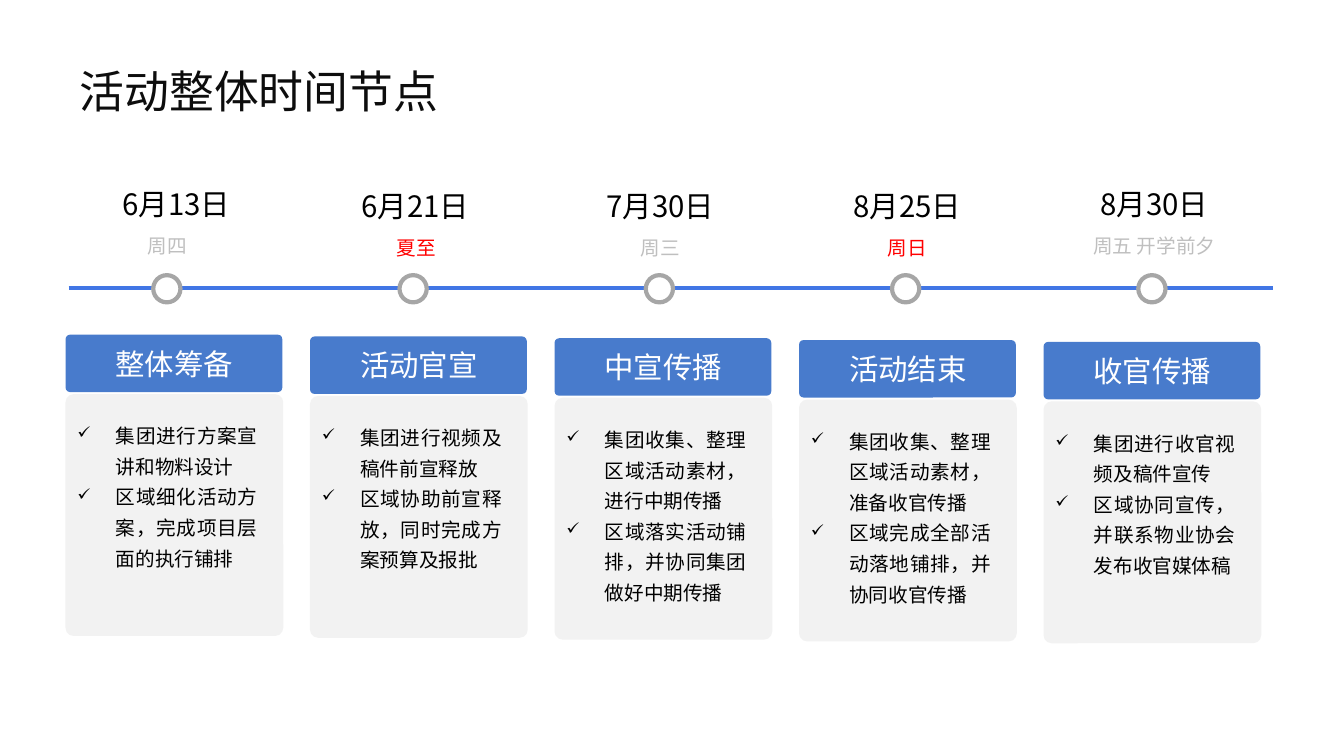
from math import ceil

from lxml import etree
from pptx import Presentation
from pptx.dml.color import RGBColor
from pptx.enum import shapes, text
from pptx.oxml import ns
from pptx.util import Inches, Pt

FONT = "Noto Sans CJK JP"
COLORS = {
    "title": "0D0D0D", "text": "000000", "white": "FFFFFF", "gray": "BFBFBF",
    "red": "FF0000", "axis": "4176E5", "ring": "A6A6A6", "head": "487BCC",
    "panel": "F2F2F2",
}
DATES = [
    ("6月13日", "周四", "gray", 1.75, 1.66, 1.8),
    ("6月21日", "夏至", "red", 4.12, 4.13, 1.82),
    ("7月30日", "周三", "gray", 6.55, 6.55, 1.82),
    ("8月25日", "周日", "red", 9, 9, 1.82),
    ("8月30日", "周五 开学前夕", "gray", 11.45, 11.45, 1.8),
]
STAGES = [
    ("整体筹备", ["集团进行方案宣讲和物料设计", "区域细化活动方案，完成项目层面的执行铺排"]),
    ("活动官宣", ["集团进行视频及稿件前宣释放", "区域协助前宣释放，同时完成方案预算及报批"]),
    ("中宣传播", ["集团收集、整理区域活动素材，进行中期传播", "区域落实活动铺排，并协同集团做好中期传播"]),
    ("活动结束", ["集团收集、整理区域活动素材，准备收官传播", "区域完成全部活动落地铺排，并协同收官传播"]),
    ("收官传播", ["集团进行收官视频及稿件宣传", "区域协同宣传，并联系物业协会发布收官媒体稿"]),
]


def tint(name):
    """Return the named colour."""
    return RGBColor.from_string(COLORS[name])


def add(parent, tag, **attrs):
    """Append a drawing element with attributes."""
    node = etree.SubElement(parent, ns.qn(tag))
    for key, value in attrs.items():
        node.set(key, value)
    return node


def write(frame, *lines, size=14, color="text", align="CENTER", space=None, bullet=None):
    """Fill a text frame with formatted paragraphs."""
    frame.word_wrap = True
    for i, line in enumerate(lines):
        para = frame.add_paragraph() if i else frame.paragraphs[0]
        para.alignment = getattr(text.PP_ALIGN, align)
        if space:
            para.line_spacing = space
        if bullet:
            props = para._p.get_or_add_pPr()
            props.set("marL", str(Inches(0.38)))
            props.set("indent", str(Inches(-0.38)))
            add(props, "a:buSzPct", val="85000")
            add(props, "a:buChar", char=bullet)
        run = para.add_run()
        run.text = line
        run.font.size = Pt(size)
        run.font.name = FONT
        run.font.color.rgb = tint(color)
        add(run._r.get_or_add_rPr(), "a:ea", typeface=FONT)


def label(host, box, *lines, **style):
    """Add a text box that grows with its text."""
    frame = host.add_textbox(*map(Inches, box)).text_frame
    write(frame, *lines, **style)
    frame.auto_size = text.MSO_AUTO_SIZE.SHAPE_TO_FIT_TEXT


def block(host, kind, box, fill, line=None, round=None):
    """Add a flat preset shape."""
    shape = host.add_shape(getattr(shapes.MSO_SHAPE, kind), *map(Inches, box))
    shape.shadow.inherit = False
    shape.fill.solid()
    shape.fill.fore_color.rgb = tint(fill)
    if line:
        shape.line.color.rgb = tint(line)
        shape.line.width = Pt(3)
    else:
        shape.line.fill.background()
    if round:
        shape.adjustments[0] = round


def heading(slide, box, line):
    """Place and format the slide title."""
    title = slide.shapes.title
    title.left, title.top, title.width, title.height = map(Inches, box)
    title.text_frame.vertical_anchor = text.MSO_ANCHOR.MIDDLE
    write(title.text_frame, line, size=32, color="title", align="LEFT", space=0.9)


def axis(host, left, top, width):
    """Draw the time axis with its dates and rings."""
    ends = map(Inches, (left, top, left + width, top))
    line = host.add_connector(shapes.MSO_CONNECTOR.STRAIGHT, *ends)
    line.line.color.rgb = tint("axis")
    line.line.width = Pt(3)
    add(line._element.spPr, "a:effectLst")
    ring, wide = 0.27, 2.47
    for i, (date, day, color, mid, low, high) in enumerate(DATES):
        label(host, (mid - wide / 2, high, wide, 0.45), date, size=21)
        label(host, (low - wide / 2, high + 0.47, wide, 0.34), day, color=color)
        spot = left + 0.84 + i * 2.4425
        block(host, "OVAL", (spot, top - 0.13, ring, ring), "white", line="ring")


def card(host, left, top, name, tasks):
    """Draw one stage as a grouped header and task panel."""
    group = host.add_group_shape().shapes
    block(group, "ROUNDED_RECTANGLE", (left, top + 0.59, 2.16, 2.4), "panel", round=0.038)
    rows = sum(ceil(len(task) / 7) for task in tasks)
    label(group, (left + 0.02, top + 0.77, 1.98, 0.1 + rows * 0.303), *tasks,
          align="JUSTIFY", space=1.3, bullet="✓")
    block(group, "ROUNDED_RECTANGLE", (left, top, 2.15, 0.57), "head", round=0.079)
    label(group, (left + 0.28, top + 0.06, 1.6, 0.45), name, size=21, color="white")


def main():
    """Build the timeline slide."""
    deck = Presentation()
    deck.slide_width, deck.slide_height = Inches(13.33), Inches(7.5)
    slide = deck.slides.add_slide(deck.slide_layouts[5])
    heading(slide, (0.69, 0.53, 11.93, 0.8), "活动整体时间节点")
    axis(slide.shapes, 0.68, 2.86, 11.95)
    for i, (name, tasks) in enumerate(STAGES):
        card(slide.shapes, 0.65 + i * 2.425, 3.32 + i * 0.018, name, tasks)
    deck.save("out.pptx")


if __name__ == "__main__":
    main()
